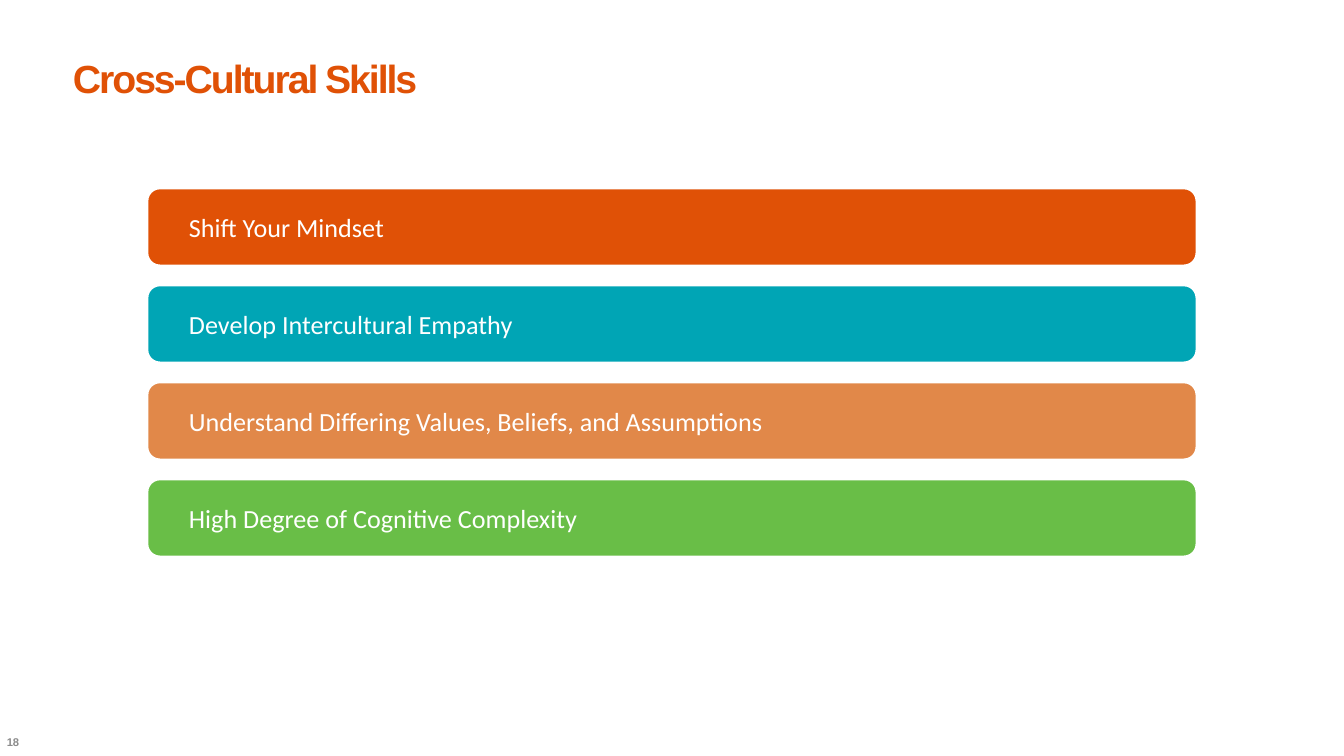
from pptx import Presentation
from pptx.dml.color import RGBColor
from pptx.enum.shapes import MSO_SHAPE
from pptx.enum.text import MSO_ANCHOR, PP_ALIGN
from pptx.util import Emu, Pt

EMU_PER_PX = 914400 / 134.4
ORANGE = "E05106"
WHITE = "FFFFFF"
GREY = "8C8C8C"

SKILLS = [
    ("Shift Your Mindset", ORANGE),
    ("Develop Intercultural Empathy", "00A5B5"),
    ("Understand Differing Values, Beliefs, and Assumptions", "E18849"),
    ("High Degree of Cognitive Complexity", "69BE47"),
]
BAR_LEFT, BAR_TOP, BAR_WIDTH, BAR_HEIGHT = 147, 188, 1050, 78
BAR_PITCH = 97


def px(length):
    return Emu(round(length * EMU_PER_PX))


def color(value):
    return RGBColor.from_string(value)


def set_text(box, text, ink, font, **frame_format):
    """Write one paragraph into a box and return it."""
    frame = box.text_frame
    frame.word_wrap = True
    for name, value in frame_format.items():
        setattr(frame, name, value)
    para = frame.paragraphs[0]
    span = para.add_run()
    span.text = text
    for name, value in font.items():
        setattr(span.font, name, value)
    span.font.color.rgb = color(ink)
    return para


def add_label(page, area, text, ink, font, anchor):
    """Add a text box without insets."""
    box = page.shapes.add_textbox(*map(px, area))
    margins = {f"margin_{side}": 0 for side in ("left", "top", "right", "bottom")}
    return set_text(box, text, ink, font, vertical_anchor=anchor, **margins)


def add_bar(page, row, text, fill):
    """Add one rounded skill bar."""
    area = (BAR_LEFT, BAR_TOP + row * BAR_PITCH, BAR_WIDTH, BAR_HEIGHT)
    bar = page.shapes.add_shape(MSO_SHAPE.ROUNDED_RECTANGLE, *map(px, area))
    bar.shadow.inherit = False
    bar.fill.solid()
    bar.fill.fore_color.rgb = color(fill)
    bar.line.color.rgb = color(WHITE)
    bar.line.width = Pt(1.5)
    para = set_text(bar, text, WHITE, {"name": "Calibri", "size": Pt(14)},
                    vertical_anchor=MSO_ANCHOR.MIDDLE)
    para.alignment = PP_ALIGN.LEFT
    para.level = 1
    # Hanging indent
    properties = para._p.get_or_add_pPr()
    properties.set("marL", str(px(52)))
    properties.set("indent", str(px(-27)))


def main():
    deck = Presentation()
    deck.slide_width, deck.slide_height = px(1344), px(756)
    page = deck.slides.add_slide(deck.slide_layouts[6])

    # Title with tightened letters
    title = add_label(page, (73, 60, 1159, 54), "Cross-Cultural Skills", ORANGE,
                      {"name": "Arial", "size": Pt(21), "bold": True}, MSO_ANCHOR.TOP)
    title.line_spacing = 0.9
    title.runs[0].font._element.set("spc", "-110")

    # Skill bars
    for row, (text, fill) in enumerate(SKILLS):
        add_bar(page, row, text, fill)

    # Page number
    number = add_label(page, (-7, 722, 40, 40), "18", GREY,
                       {"name": "Arial", "size": Pt(6), "bold": True}, MSO_ANCHOR.MIDDLE)
    number.alignment = PP_ALIGN.CENTER

    deck.save("out.pptx")


if __name__ == "__main__":
    main()
